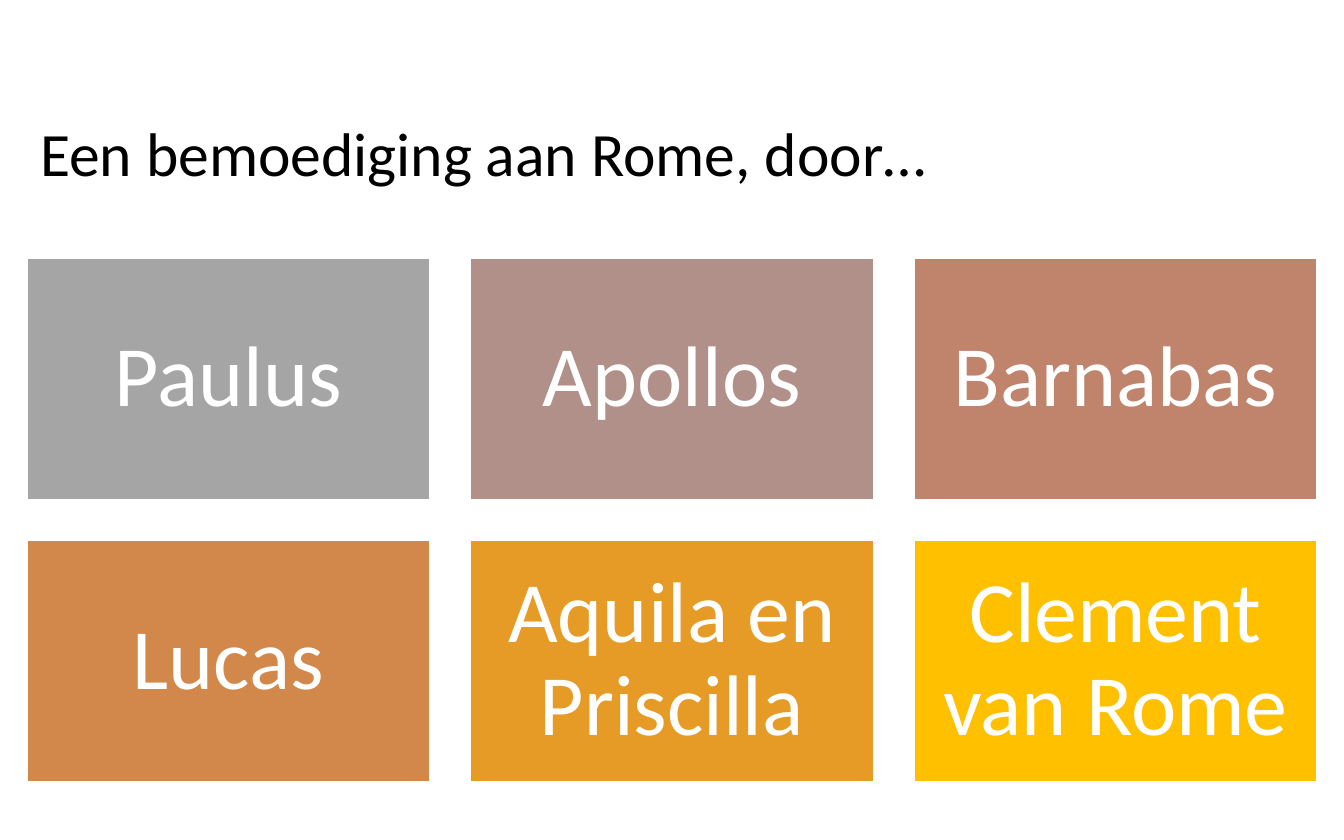
from dataclasses import dataclass

import pptx
import pptx.dml.color
import pptx.enum.shapes
import pptx.enum.text
import pptx.slide
import pptx.text.text
import pptx.util

Inches = pptx.util.Inches
Pt = pptx.util.Pt
RGBColor = pptx.dml.color.RGBColor

WHITE = RGBColor(0xFF, 0xFF, 0xFF)
BLACK = RGBColor(0x00, 0x00, 0x00)
GREY = RGBColor(0xA5, 0xA5, 0xA5)
MAUVE = RGBColor(0xB1, 0x90, 0x8A)
TERRACOTTA = RGBColor(0xC0, 0x84, 0x6C)
COPPER = RGBColor(0xD2, 0x88, 0x4B)
AMBER = RGBColor(0xE7, 0x9B, 0x27)
GOLD = RGBColor(0xFF, 0xC0, 0x00)

FONT = "Calibri"
COLUMNS = 3
GRID_LEFT, GRID_TOP = 0.2, 1.92
CARD_WIDTH, CARD_HEIGHT, GAP = 3, 1.8, 0.3


@dataclass(frozen=True)
class AuthorCard:
    name: str
    fill: RGBColor


AUTHORS = [
    AuthorCard("Paulus", GREY),
    AuthorCard("Apollos", MAUVE),
    AuthorCard("Barnabas", TERRACOTTA),
    AuthorCard("Lucas", COPPER),
    AuthorCard("Aquila en Priscilla", AMBER),
    AuthorCard("Clement van Rome", GOLD),
]


def set_attributes(target: object, values: dict) -> None:
    for name, value in values.items():
        setattr(target, name, value)


def write_text(frame: pptx.text.text.TextFrame, text: str, size: float,
               color: RGBColor, alignment: pptx.enum.text.PP_ALIGN) -> None:
    """Fill the frame with one vertically centred paragraph."""
    set_attributes(frame, {
        "text": text,
        "word_wrap": True,
        "auto_size": pptx.enum.text.MSO_AUTO_SIZE.NONE,
        "vertical_anchor": pptx.enum.text.MSO_ANCHOR.MIDDLE,
    })
    paragraph = frame.paragraphs[0]
    set_attributes(paragraph, {"alignment": alignment, "line_spacing": 0.9})
    font = paragraph.runs[0].font
    set_attributes(font, {"name": FONT, "size": Pt(size)})
    font.color.rgb = color


def add_title(slide: pptx.slide.Slide, text: str) -> None:
    title = slide.shapes.title
    set_attributes(title, {
        "left": Inches(0.2), "top": Inches(0.68),
        "width": Inches(9.3), "height": Inches(0.97),
    })
    write_text(title.text_frame, text, 33, BLACK, pptx.enum.text.PP_ALIGN.LEFT)


def add_author_card(slide: pptx.slide.Slide, card: AuthorCard, index: int) -> None:
    row, column = divmod(index, COLUMNS)
    shape = slide.shapes.add_shape(
        pptx.enum.shapes.MSO_SHAPE.RECTANGLE,
        Inches(GRID_LEFT + column * (CARD_WIDTH + GAP)),
        Inches(GRID_TOP + row * (CARD_HEIGHT + GAP)),
        Inches(CARD_WIDTH), Inches(CARD_HEIGHT))
    shape.shadow.inherit = False
    shape.fill.solid()
    shape.fill.fore_color.rgb = card.fill
    shape.line.color.rgb = WHITE
    shape.line.width = Pt(1)
    sides = ("left", "top", "right", "bottom")
    set_attributes(shape.text_frame, {f"margin_{side}": Inches(0.19) for side in sides})
    write_text(shape.text_frame, card.name, 46, WHITE, pptx.enum.text.PP_ALIGN.CENTER)


def main() -> None:
    presentation = pptx.Presentation()
    set_attributes(presentation, {"slide_width": Inches(10), "slide_height": Inches(6.25)})
    title_only = presentation.slide_layouts.get_by_name("Title Only")
    slide = presentation.slides.add_slide(title_only)
    add_title(slide, "Een bemoediging aan Rome, door…")
    for index, card in enumerate(AUTHORS):
        add_author_card(slide, card, index)
    presentation.save("out.pptx")


if __name__ == "__main__":
    main()
